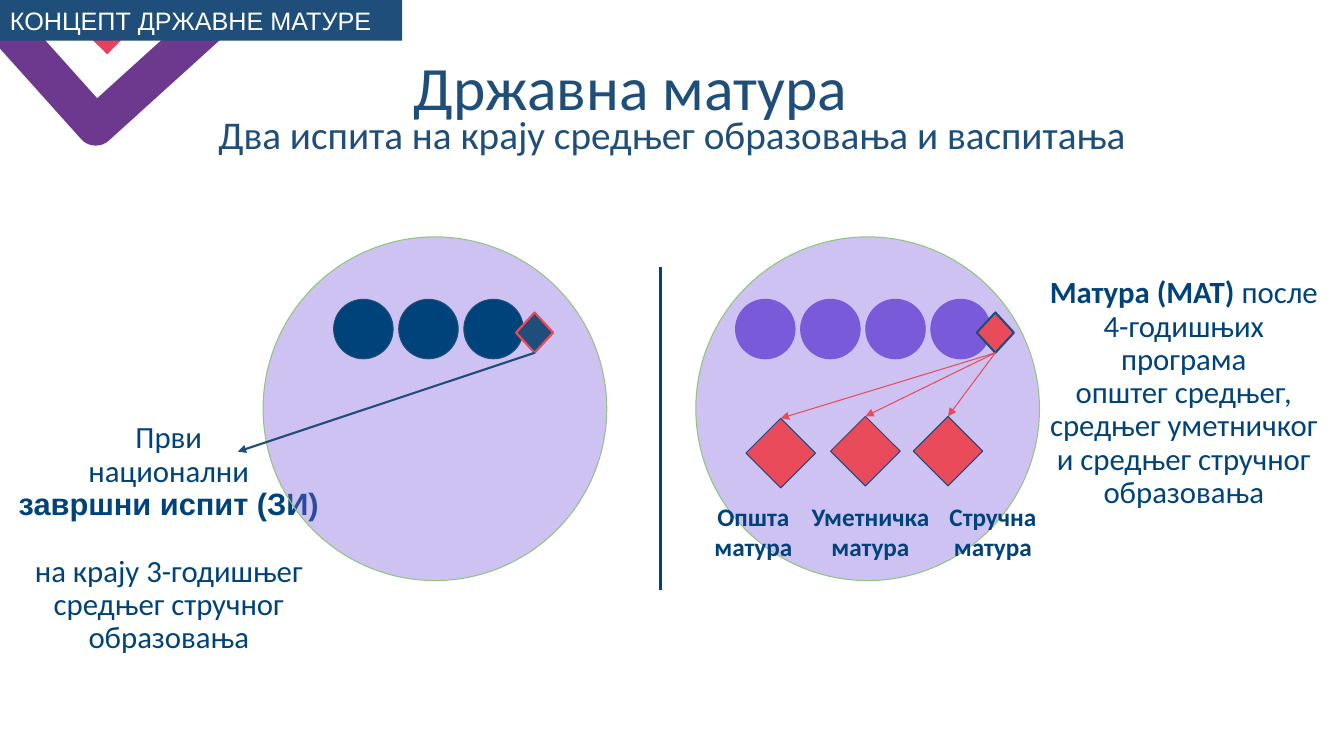
from dataclasses import dataclass

from lxml import etree
from pptx import Presentation
from pptx.dml.color import RGBColor
from pptx.enum.shapes import MSO_CONNECTOR, MSO_SHAPE
from pptx.enum.text import MSO_ANCHOR, PP_ALIGN
from pptx.oxml.ns import qn
from pptx.util import Pt

RECTANGLE, OVAL = MSO_SHAPE.RECTANGLE, MSO_SHAPE.OVAL
DIAMOND = MSO_SHAPE.FLOWCHART_DECISION
STRAIGHT = MSO_CONNECTOR.STRAIGHT
LEFT, CENTER = PP_ALIGN.LEFT, PP_ALIGN.CENTER
TOP, MIDDLE = MSO_ANCHOR.TOP, MSO_ANCHOR.MIDDLE
TOP_SIDE, BOTTOM_SIDE = 0, 2


@dataclass(frozen=True)
class Theme:
    navy: str = "1E4E79"
    blue: str = "00437A"
    outline: str = "1F497D"
    violet: str = "795BDA"
    green: str = "93C47D"
    red: str = "E94B5B"
    chevron: str = "6C398F"
    chevron_tip: str = "E8405D"
    white: str = "FFFFFF"
    body_font: str = "Calibri"
    label_font: str = "Arial"
    title: int = 44
    subtitle: int = 28
    body: int = 22
    label: int = 18


THEME = Theme()


def rgb(color):
    return RGBColor.from_string(color)


def style_line(shape, color, width):
    shape.line.color.rgb = rgb(color)
    shape.line.width = Pt(width)


def add_outline(slide, points, color, width):
    """Open thick stroke with rounded corners."""
    (start_x, start_y), *others = [(Pt(x), Pt(y)) for x, y in points]
    builder = slide.shapes.build_freeform(start_x, start_y)
    builder.add_line_segments(others, close=False)
    shape = builder.convert_to_shape()
    shape.shadow.inherit = False
    shape.fill.background()
    style_line(shape, color, width)
    etree.SubElement(shape.line._get_or_add_ln(), qn("a:round"))


def add_figure(slide, kind, box, fill, line=None, width=0.75, opacity=None):
    shape = slide.shapes.add_shape(kind, *map(Pt, box))
    shape.shadow.inherit = False
    shape.fill.solid()
    shape.fill.fore_color.rgb = rgb(fill)
    if opacity is not None:
        color = shape.fill._xPr.find(qn("a:solidFill"))[0]
        etree.SubElement(color, qn("a:alpha"), val=str(opacity * 1000))
    if line:
        style_line(shape, line, width)
    else:
        shape.line.fill.background()
    return shape


def add_line(slide, start, end, color, width, arrow=False):
    connector = slide.shapes.add_connector(STRAIGHT, *map(Pt, (*start, *end)))
    style_line(connector, color, width)
    etree.SubElement(connector._element.spPr, qn("a:effectLst"))
    if arrow:
        line = connector.line._get_or_add_ln()
        etree.SubElement(line, qn("a:tailEnd"), type="triangle")
    return connector


def write_text(shape, lines, size, color, font=THEME.body_font, bold=False,
               align=CENTER, spacing=0.9, anchor=TOP, inset=3.6):
    """Each line is a string or a list of (text, bold) runs."""
    frame = shape.text_frame
    frame.word_wrap = True
    frame.vertical_anchor = anchor
    frame.margin_left = frame.margin_right = Pt(7.2)
    frame.margin_top = frame.margin_bottom = Pt(inset)
    for index, line in enumerate(lines):
        paragraph = frame.add_paragraph() if index else frame.paragraphs[0]
        paragraph.alignment = align
        paragraph.line_spacing = spacing
        paragraph.font.name = font
        paragraph.font.size = Pt(size)
        paragraph.font.color.rgb = rgb(color)
        if isinstance(line, str):
            paragraph.font.bold = bold
            paragraph.add_run().text = line
            continue
        for text, run_bold in line:
            run = paragraph.add_run()
            run.text = text
            run.font.bold = run_bold
    return frame.paragraphs


def add_text(slide, box, lines, size, color, **options):
    shape = slide.shapes.add_textbox(*map(Pt, box))
    return write_text(shape, lines, size, color, **options)


def add_exam_row(slide, left, count, fill, line, diamond_left, diamond_fill, diamond_line):
    """Row of school years closed by the exam diamond, which is returned."""
    for year in range(count):
        add_figure(slide, OVAL, (left + 46.5 * year, 213.8, 42.5, 42.5), fill, line)
    return add_figure(slide, DIAMOND, (diamond_left, 223.2, 26.6, 28.8),
                      diamond_fill, diamond_line, 1.5)


def add_heading(slide):
    add_outline(slide, [(167.8, 0), (68.4, 90), (0, 13.7)], THEME.chevron, 28)
    add_outline(slide, [(56.9, 0), (86.4, 28.8)], THEME.chevron_tip, 28)
    add_text(slide, (257.8, 23, 385.2, 83.5), ["Државна матура"],
             THEME.title, THEME.navy, anchor=MIDDLE)
    banner = add_figure(slide, RECTANGLE, (0, 0, 287.3, 29), THEME.navy)
    write_text(banner, ["КОНЦЕПТ ДРЖАВНЕ МАТУРЕ"], THEME.label, THEME.white,
               font=THEME.label_font, align=LEFT, spacing=1.0)
    add_text(slide, (27.4, 79.2, 905, 41.8),
             ["Два испита на крају средњег образовања и васпитања"],
             THEME.subtitle, THEME.navy)


def add_descriptions(slide):
    final_exam = add_text(
        slide, (2.9, 298, 235.4, 212.4),
        ["Први", "национални", [("завршни испит (ЗИ)", True)],
         "на крају 3-годишњег средњег стручног образовања"],
        THEME.body, THEME.blue)
    final_exam[2].font.name = THEME.label_font
    final_exam[3].space_before = Pt(24)
    add_text(
        slide, (738.7, 190.8, 213.8, 182.2),
        [[("Матура (МАТ)", True), (" после", False)], "4-годишњих програма",
         "општег средњег, средњег уметничког", "и средњег стручног образовања"],
        THEME.body, THEME.blue, inset=7.2)


def main():
    presentation = Presentation()
    presentation.slide_width, presentation.slide_height = Pt(960), Pt(540)
    slide = presentation.slides.add_slide(presentation.slide_layouts[6])

    add_heading(slide)
    add_line(slide, (471.6, 190.8), (471.6, 421.2), THEME.blue, 2.25)
    add_descriptions(slide)

    # Large circles
    for left in (187.9, 497):
        add_figure(slide, OVAL, (left, 169.2, 245.5, 245.5), THEME.violet,
                   THEME.green, opacity=37)

    # Three-year schools and the final exam
    final_exam = add_exam_row(slide, 238.3, 3, THEME.blue, THEME.navy,
                              368.6, THEME.navy, THEME.red)
    arrow = add_line(slide, (381.9, 252), (169.9, 322.6), THEME.navy, 1.5, arrow=True)
    arrow.begin_connect(final_exam, BOTTOM_SIDE)

    # Four-year schools and the kinds of matura
    matura = add_exam_row(slide, 525.4, 4, THEME.violet, THEME.violet,
                          697.7, THEME.red, THEME.navy)
    kinds = [
        ("Општа", 532.8, 298.8, 498.2, 79.9),
        ("Уметничка", 593.3, 297.4, 567.4, 108.7),
        ("Стручна", 652.3, 297.4, 652.3, 113.8),
    ]
    for name, left, top, label_left, label_width in kinds:
        diamond = add_figure(slide, DIAMOND, (left, top, 49.7, 49.7),
                             THEME.red, THEME.outline)
        arrow = add_line(slide, (711, 252), (left + 24.85, top), THEME.red, 0.75, arrow=True)
        arrow.begin_connect(matura, BOTTOM_SIDE)
        arrow.end_connect(diamond, TOP_SIDE)
        add_text(slide, (label_left, 350.6, label_width, 58.3), [name, "матура"],
                 THEME.label, THEME.blue, bold=True, spacing=1.0, inset=7.2)

    presentation.save("out.pptx")


if __name__ == "__main__":
    main()
